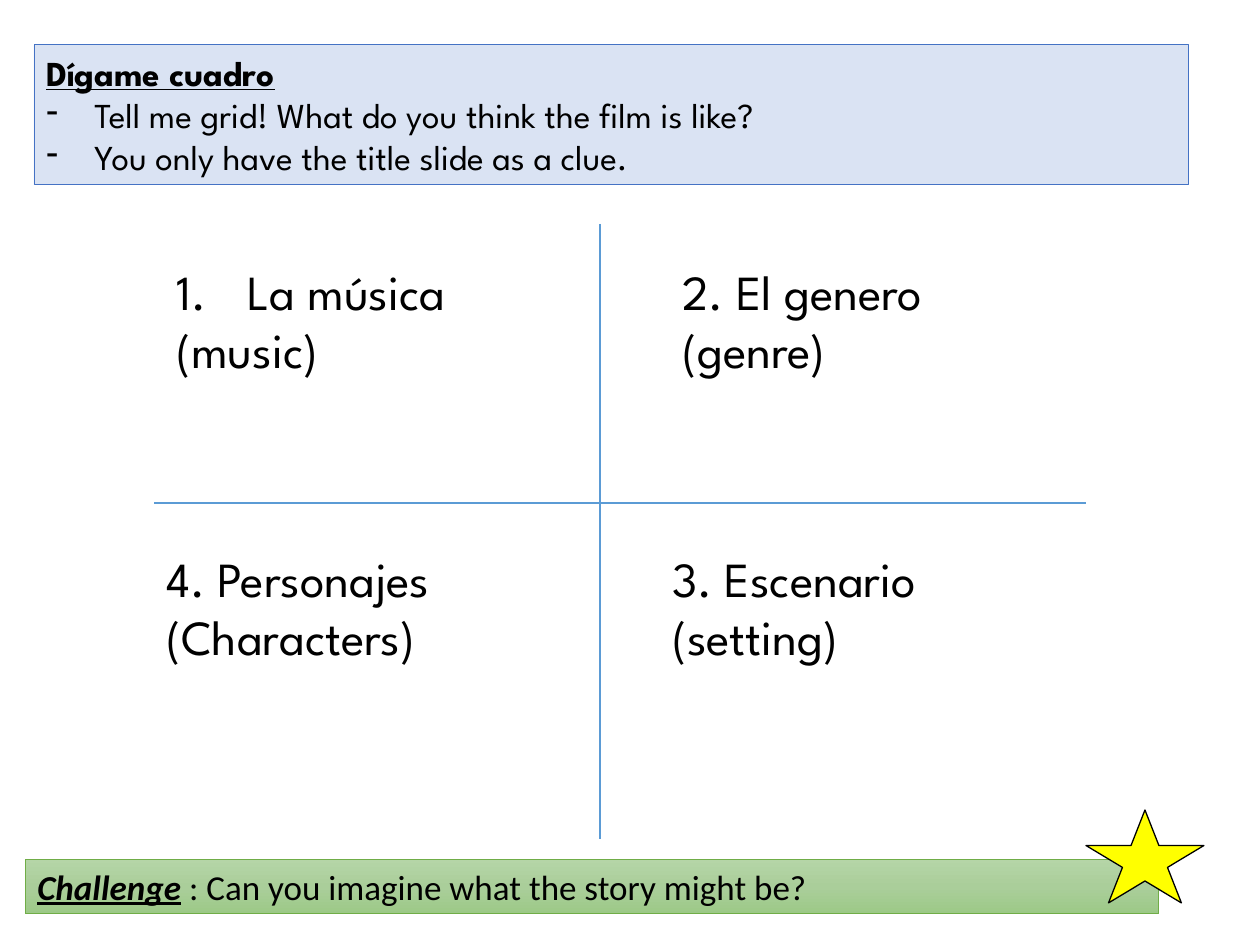
import copy
from dataclasses import dataclass

import pptx
import pptx.dml.color
import pptx.enum.shapes
import pptx.enum.text
import pptx.oxml
import pptx.oxml.ns
import pptx.util

PX = 914400 // 126
SHAPES = pptx.enum.shapes.MSO_SHAPE


@dataclass(frozen=True)
class Theme:
    heading_font: str = "League Spartan"
    body_font: str = "Calibri"
    small: int = 20
    large: int = 28
    text: str = "000000"
    panel: str = "DAE3F3"
    panel_line: str = "4472C4"
    axis: str = "5B9BD5"
    bar_stops: tuple = ((0, "B5D5A7"), (50, "AACE9A"), (100, "9CC987"))
    bar_line: str = "70AD47"
    star: str = "FFFF00"


THEME = Theme()
DASH = '<a:buChar {} char="-"/>'
NUMBER = '<a:buAutoNum {} type="arabicPeriod"/>'
EMPHASIS = {"bold": True, "underline": True}

INTRO_BOX = (34, 45, 1155, 140)
INTRO = [
    ([("Dígame cuadro", EMPHASIS)], None, 0),
    ([("Tell me grid! What do you think the film is like?", {})], DASH, 48),
    ([("You only have the title slide as a clue.", {})], DASH, 48),
]
AXES = [(600, 224, 600, 839), (1086, 503, 154, 503)]
QUADRANT_SIZE = (417, 130)
QUADRANT_STEP = 506
QUADRANT_ROWS = [
    (164, 255, [("La música", "(music)", NUMBER, 71), ("2. El genero", "(genre)", None, 0)]),
    (154, 542, [("4. Personajes", "(Characters)", None, 0), ("3. Escenario", "(setting)", None, 0)]),
]
CHALLENGE_BOX = (25, 859, 1134, 55)
CHALLENGE = [
    ([("Challenge", {**EMPHASIS, "italic": True}),
      (" : Can you imagine what the story might be?", {})], None, 0),
]
STAR_BOX = (1086, 810, 118, 93)


def emu(lengths):
    return [length * PX for length in lengths]


def color(value):
    return pptx.dml.color.RGBColor.from_string(value)


def set_all(target, values):
    for name, value in values.items():
        setattr(target, name, value)


def write(shape, paragraphs, font, size, anchor=pptx.enum.text.MSO_ANCHOR.TOP):
    frame = shape.text_frame
    set_all(frame, {
        "word_wrap": True,
        "vertical_anchor": anchor,
        "auto_size": pptx.enum.text.MSO_AUTO_SIZE.SHAPE_TO_FIT_TEXT,
    })
    for index, (runs, bullet, indent) in enumerate(paragraphs):
        paragraph = frame.add_paragraph() if index else frame.paragraphs[0]
        paragraph.alignment = pptx.enum.text.PP_ALIGN.LEFT
        if bullet:
            properties = paragraph._p.get_or_add_pPr()
            properties.set("marL", str(indent * PX))
            properties.set("indent", str(-indent * PX))
            properties.append(pptx.oxml.parse_xml(bullet.format(pptx.oxml.ns.nsdecls("a"))))
        for text, style in runs:
            run = paragraph.add_run()
            run.text = text
            set_all(run.font, {"name": font, "size": pptx.util.Pt(size), **style})
            run.font.color.rgb = color(THEME.text)


def add_shape(slide, kind, box, line, width, fill=None):
    shape = slide.shapes.add_shape(kind, *emu(box))
    shape.shadow.inherit = False
    shape.line.color.rgb = color(line)
    shape.line.width = pptx.util.Pt(width)
    if fill:
        shape.fill.solid()
        shape.fill.fore_color.rgb = color(fill)
    return shape


def fill_gradient(shape, stops):
    shape.fill.gradient()
    shape.fill.gradient_angle = 270
    first = shape.fill.gradient_stops[0]._gs
    for _ in stops[2:]:
        first.addnext(copy.deepcopy(first))
    for stop, (position, value) in zip(shape.fill.gradient_stops, stops):
        stop.position = position / 100
        stop.color.rgb = color(value)


def add_axis(slide, ends):
    axis = slide.shapes.add_connector(pptx.enum.shapes.MSO_CONNECTOR.STRAIGHT, *emu(ends))
    axis.line.color.rgb = color(THEME.axis)
    axis.line.width = pptx.util.Pt(1)
    pptx.oxml.ns.qn("a:effectLst")
    axis._element.spPr.append(
        pptx.oxml.parse_xml(f"<a:effectLst {pptx.oxml.ns.nsdecls('a')}/>"))


def main():
    presentation = pptx.Presentation()
    set_all(presentation, {
        "slide_width": pptx.util.Inches(10),
        "slide_height": pptx.util.Inches(7.5),
    })
    slide = presentation.slides.add_slide(presentation.slide_layouts[6])

    intro = add_shape(slide, SHAPES.RECTANGLE, INTRO_BOX, THEME.panel_line, 0.5, THEME.panel)
    write(intro, INTRO, THEME.heading_font, THEME.small, pptx.enum.text.MSO_ANCHOR.MIDDLE)

    for ends in AXES:
        add_axis(slide, ends)

    for left, top, quadrants in QUADRANT_ROWS:
        for column, (spanish, english, bullet, indent) in enumerate(quadrants):
            box = (left + column * QUADRANT_STEP, top, *QUADRANT_SIZE)
            label = slide.shapes.add_textbox(*emu(box))
            lines = [([(spanish, {})], bullet, indent), ([(english, {})], None, 0)]
            write(label, lines, THEME.heading_font, THEME.large)

    challenge = add_shape(slide, SHAPES.RECTANGLE, CHALLENGE_BOX, THEME.bar_line, 0.5)
    fill_gradient(challenge, THEME.bar_stops)
    write(challenge, CHALLENGE, THEME.body_font, THEME.small)

    add_shape(slide, SHAPES.STAR_5_POINT, STAR_BOX, THEME.text, 0.75, THEME.star)
    presentation.save("out.pptx")


if __name__ == "__main__":
    main()
